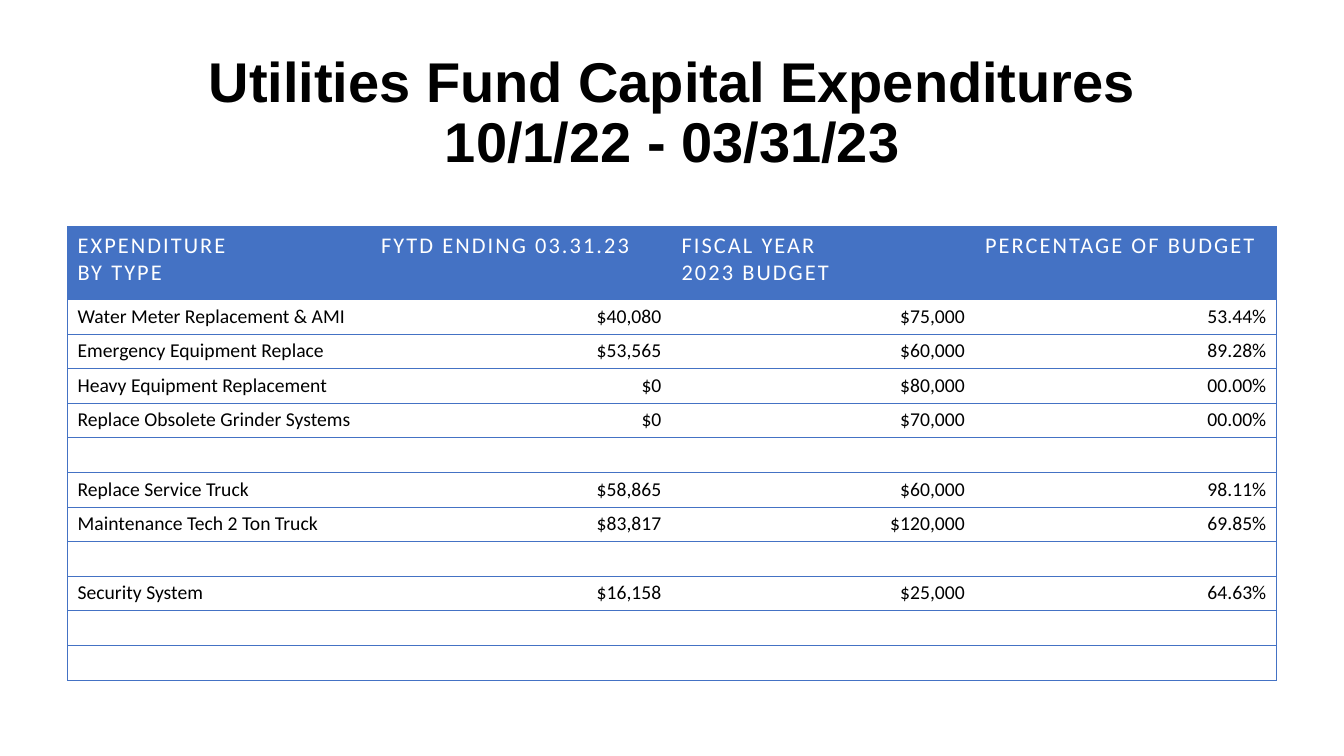
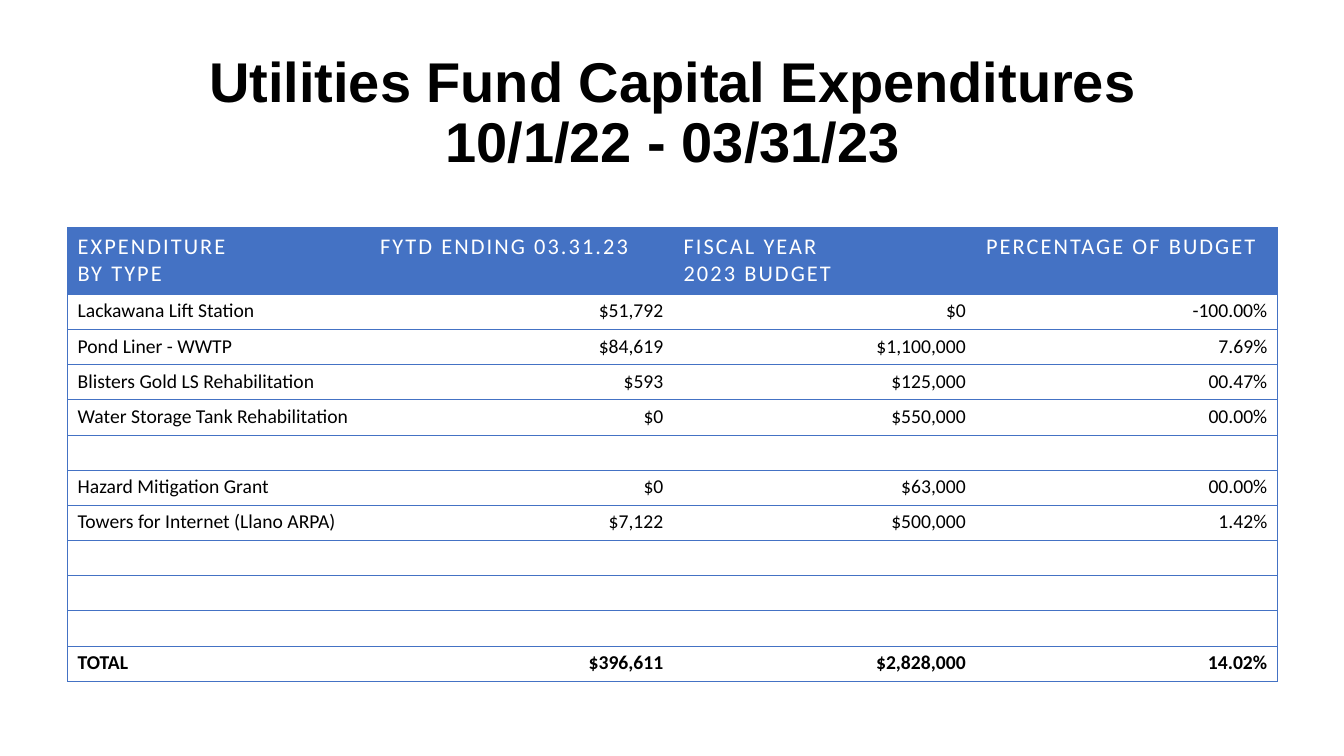
from dataclasses import dataclass

from lxml import etree
from pptx import Presentation
from pptx import util as u
from pptx.dml.color import RGBColor
from pptx.enum import text
from pptx.oxml import ns

PX = 9144  # EMU in one px, 100 px to the inch


@dataclass(frozen=True)
class Theme:
    accent = RGBColor.from_string("4472C4")
    ink = RGBColor.from_string("000000")
    paper = RGBColor.from_string("FFFFFF")
    rule_width = u.Pt(0.5)
    header_tracking = 150
    title = dict(name="Arial", size=u.Pt(40), bold=True)
    header = dict(name="Calibri", size=u.Pt(16), bold=False)
    body = dict(name="Calibri", size=u.Pt(14), bold=False)
    total = dict(name="Calibri", size=u.Pt(14), bold=True)


THEME = Theme()
PLAIN_TABLE = "{2D5ABB26-0587-4C30-8999-92F81FD0307C}"
TITLE = "Utilities Fund Capital Expenditures\v10/1/22 - 03/31/23"
HEADINGS = ["EXPENDITURE\nBY TYPE", "FYTD ENDING 03.31.23",
            "FISCAL YEAR\n2023 BUDGET", "PERCENTAGE OF BUDGET"]
BLANK = ("", "", "", "")

PAGES = [
    dict(
        title_box=(67, 33, 1199, 161), table_box=(67, 225, 1199, 450),
        header_height=72, columns=(301, 298, 301, 299),
        rows=[
            ("Water Meter Replacement & AMI", "$40,080", "$75,000", "53.44%"),
            ("Emergency Equipment Replace", "$53,565", "$60,000", "89.28%"),
            ("Heavy Equipment Replacement", "$0", "$80,000", "00.00%"),
            ("Replace Obsolete Grinder Systems", "$0", "$70,000", "00.00%"),
            BLANK,
            ("Replace Service Truck", "$58,865", "$60,000", "98.11%"),
            ("Maintenance Tech 2 Ton Truck", "$83,817", "$120,000", "69.85%"),
            BLANK,
            ("Security System", "$16,158", "$25,000", "64.63%"),
            BLANK,
            BLANK,
        ],
    ),
    dict(
        title_box=(67, 33, 1200, 161), table_box=(67, 226, 1200, 450),
        header_height=66, columns=(300, 301, 300, 299),
        rows=[
            ("Lackawana Lift Station", "$51,792", "$0", "-100.00%"),
            ("Pond Liner - WWTP", "$84,619", "$1,100,000", "7.69%"),
            ("Blisters Gold LS Rehabilitation", "$593", "$125,000", "00.47%"),
            ("Water Storage Tank Rehabilitation", "$0", "$550,000", "00.00%"),
            BLANK,
            ("Hazard Mitigation Grant", "$0", "$63,000", "00.00%"),
            ("Towers for Internet (Llano ARPA)", "$7,122", "$500,000", "1.42%"),
            BLANK,
            BLANK,
            BLANK,
            ("TOTAL", "$396,611", "$2,828,000", "14.02%"),
        ],
    ),
]


def emu(box):
    return [length * PX for length in box]


def format_spans(para, style, color):
    for span in para.runs:
        for name, value in style.items():
            setattr(span.font, name, value)
        span.font.color.rgb = color


def add_title(page, box):
    frame = page.shapes.add_textbox(*emu(box)).text_frame
    frame.word_wrap = True
    frame.vertical_anchor = text.MSO_ANCHOR.MIDDLE
    para = frame.paragraphs[0]
    para.text = TITLE
    para.alignment = text.PP_ALIGN.CENTER
    para.line_spacing = 0.9
    format_spans(para, THEME.title, THEME.ink)


def add_borders(cell, sides):
    """Rule the given sides, a string of letters in the order L, R, T, B."""
    properties = cell._tc.get_or_add_tcPr()
    for side in sides:
        line = etree.SubElement(properties, ns.qn(f"a:ln{side}"), w=str(THEME.rule_width))
        fill = etree.SubElement(line, ns.qn("a:solidFill"))
        etree.SubElement(fill, ns.qn("a:srgbClr"), val=str(THEME.accent))


def fill_header_cell(cell, words):
    cell.fill.solid()
    cell.fill.fore_color.rgb = THEME.accent
    cell.text = words
    for para in cell.text_frame.paragraphs:
        format_spans(para, THEME.header, THEME.paper)
        for span in para.runs:
            span.font._element.set("spc", str(THEME.header_tracking))


def fill_body_cell(cell, words, is_label, style):
    cell.fill.background()
    para = cell.text_frame.paragraphs[0]
    if is_label:
        cell.margin_right = 0
    else:
        para.alignment = text.PP_ALIGN.RIGHT
    if words:
        para.text = words
        format_spans(para, style, THEME.ink)
    else:  # the end mark keeps an empty row at body height
        size = str(int(style["size"].pt * 100))
        etree.SubElement(para._p, ns.qn("a:endParaRPr"), sz=size)


def add_expenditure_table(page, box, columns, header_height, rows):
    frame = page.shapes.add_table(len(rows) + 1, len(columns), *emu(box))
    table = frame.table
    table.horz_banding = False
    next(frame._element.iter(ns.qn("a:tableStyleId"))).text = PLAIN_TABLE
    for column, width in zip(table.columns, columns):
        column.width = width * PX
    body_height = (box[3] - header_height) * PX // len(rows)
    for index, words_in_row in enumerate([HEADINGS, *rows]):
        table.rows[index].height = body_height if index else header_height * PX
        style = THEME.total if words_in_row[0] == "TOTAL" else THEME.body
        for place, words in enumerate(words_in_row):
            cell = table.cell(index, place)
            outer = {0: "L", len(columns) - 1: "R"}.get(place, "")
            add_borders(cell, outer + "TB")
            if index:
                fill_body_cell(cell, words, place == 0, style)
            else:
                fill_header_cell(cell, words)


def add_expenditure_page(deck, title_box, table_box, **table_parts):
    page = deck.slides.add_slide(deck.slide_layouts[6])
    add_title(page, title_box)
    add_expenditure_table(page, table_box, **table_parts)


def main():
    deck = Presentation()
    deck.slide_width, deck.slide_height = emu((1333, 750))
    for parts in PAGES:
        add_expenditure_page(deck, **parts)
    deck.save("out.pptx")


if __name__ == "__main__":
    main()
